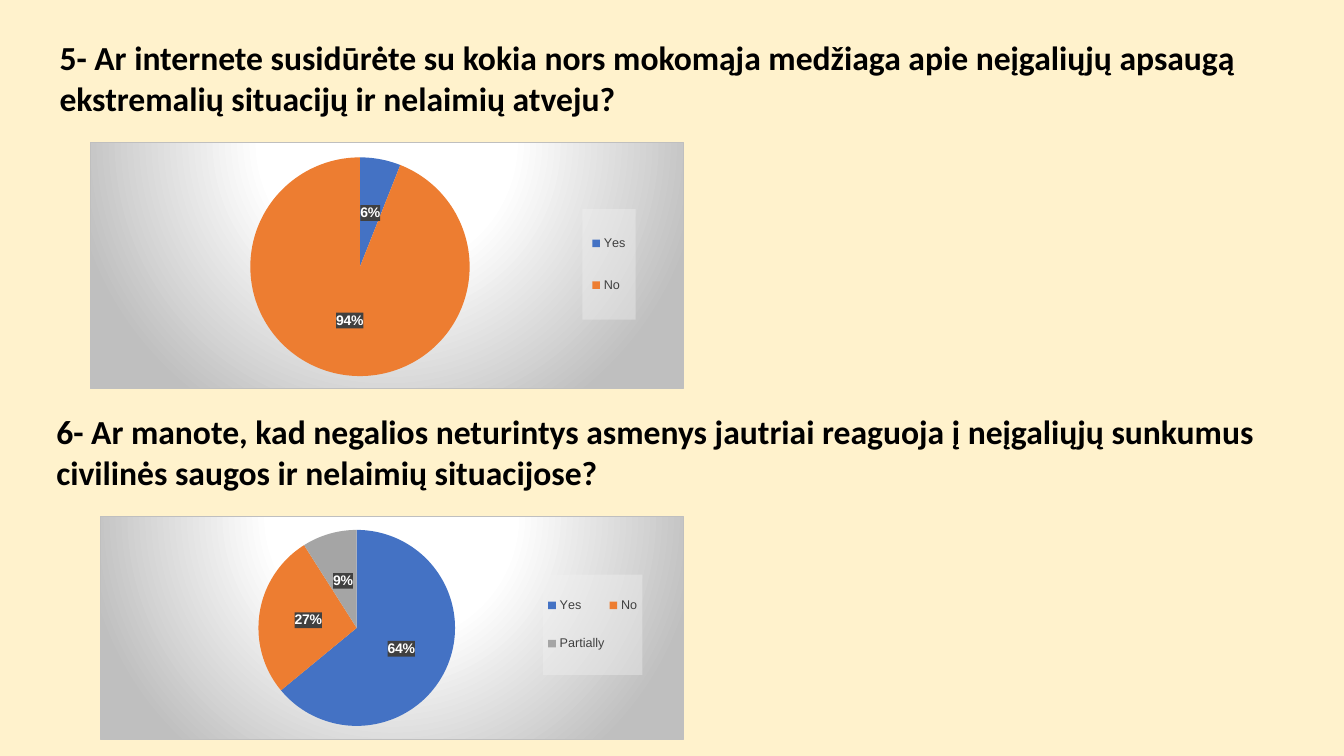
from pptx import Presentation
from pptx.chart.data import CategoryChartData
from pptx.dml.color import RGBColor
from pptx.enum.chart import XL_CHART_TYPE, XL_LABEL_POSITION, XL_LEGEND_POSITION
from pptx.enum.text import MSO_ANCHOR, MSO_AUTO_SIZE, PP_ALIGN
from pptx.oxml import parse_xml
from pptx.oxml.ns import nsdecls
from pptx.util import Inches, Pt

CREAM = RGBColor(0xFF, 0xF2, 0xCC)
BLACK = RGBColor(0x00, 0x00, 0x00)
WHITE = RGBColor(0xFF, 0xFF, 0xFF)
DARK = RGBColor(0x40, 0x40, 0x40)
SILVER = RGBColor(0xBF, 0xBF, 0xBF)
PALE = RGBColor(0xF2, 0xF2, 0xF2)
SLICES = [RGBColor(0x44, 0x72, 0xC4), RGBColor(0xED, 0x7D, 0x31),
          RGBColor(0xA5, 0xA5, 0xA5)]

QUESTIONS = [
    {"text": "5- Ar internete susidūrėte su kokia nors mokomąja medžiaga apie "
             "neįgaliųjų apsaugą ekstremalių situacijų ir nelaimių atveju?",
     "at": (0.49, 0.32, 12.42, 0.91), "chart": (0.89, 1.41, 5.89, 2.45),
     "votes": {"Yes": 6, "No": 94},
     "pie": (0.27, 0.06, 0.37, 0.89), "key": (0.83, 0.27, 0.09, 0.45)},
    {"text": "6- Ar manote, kad negalios neturintys asmenys jautriai reaguoja į "
             "neįgaliųjų sunkumus civilinės saugos ir nelaimių situacijose?",
     "at": (0.46, 4.03, 12.42, 0.91), "chart": (0.99, 5.12, 5.79, 2.22),
     "votes": {"Yes": 64, "No": 27, "Partially": 9},
     "pie": (0.27, 0.06, 0.34, 0.88), "key": (0.76, 0.26, 0.17, 0.45)},
]

GLOW = f"""<a:gradFill><a:gsLst>
<a:gs pos="0"><a:srgbClr val="{WHITE}"/></a:gs>
<a:gs pos="39000"><a:srgbClr val="{WHITE}"/></a:gs>
<a:gs pos="100000"><a:srgbClr val="{SILVER}"/></a:gs></a:gsLst>
<a:path path="circle"><a:fillToRect l="50000" t="-80000" r="50000" b="180000"/></a:path>
</a:gradFill><a:ln w="9525"><a:solidFill><a:srgbClr val="{SILVER}"/></a:solidFill></a:ln>"""
VEIL = f'<a:solidFill><a:srgbClr val="{PALE}"><a:alpha val="39000"/></a:srgbClr></a:solidFill>'
PLATE = f'<a:solidFill><a:srgbClr val="{DARK}"/></a:solidFill>'


def paint(fill):
    return parse_xml(f'<c:spPr {nsdecls("c", "a")}>{fill}</c:spPr>')


def place(box, target):
    """Layout XML for a box given as fractions of the chart."""
    inner = '<c:layoutTarget val="inner"/>' if target == "inner" else ""
    modes = '<c:xMode val="edge"/><c:yMode val="edge"/>'
    sides = "".join(f'<c:{side} val="{part}"/>' for side, part in zip("xywh", box))
    return parse_xml(f'<c:layout {nsdecls("c")}><c:manualLayout>{inner}{modes}{sides}'
                     '</c:manualLayout></c:layout>')


deck = Presentation()
deck.slide_width, deck.slide_height = Inches(13.33), Inches(7.5)
slide = deck.slides.add_slide(deck.slide_layouts[5])
slide.background.fill.solid()
slide.background.fill.fore_color.rgb = CREAM

for order, ask in enumerate(QUESTIONS):
    spot = [Inches(n) for n in ask["at"]]
    if order == 0:
        box = slide.shapes.title
        box.left, box.top, box.width, box.height = spot
    else:
        box = slide.shapes.add_textbox(*spot)
    frame = box.text_frame
    frame.text = ask["text"]
    frame.word_wrap = True
    frame.auto_size = MSO_AUTO_SIZE.NONE
    frame.vertical_anchor = MSO_ANCHOR.TOP
    line = frame.paragraphs[0]
    line.alignment = PP_ALIGN.LEFT
    font = line.runs[0].font

    data = CategoryChartData()
    data.categories = list(ask["votes"])
    data.add_series("Series 1", list(ask["votes"].values()))
    chart = slide.shapes.add_chart(
        XL_CHART_TYPE.PIE, *[Inches(n) for n in ask["chart"]], data).chart
    chart.has_title = False
    chart.has_legend = True
    legend = chart.legend
    legend.position = XL_LEGEND_POSITION.RIGHT
    legend.include_in_layout = False

    series = chart.plots[0].series[0]
    chart.plots[0].vary_by_categories = True
    for i in range(len(ask["votes"])):
        fill = series.points[i].format.fill
        fill.solid()
        fill.fore_color.rgb = SLICES[i]
    labels = series.data_labels
    formats = {"show_percentage": True, "show_value": False, "number_format": "0%",
               "number_format_is_linked": False, "position": XL_LABEL_POSITION.CENTER}
    for name, value in formats.items():
        setattr(labels, name, value)

    for face, name, size, color, bold in [
            (font, "Calibri", 24, BLACK, True), (chart.font, "Arial", 10, BLACK, False),
            (legend.font, "Arial", 9, DARK, False), (labels.font, "Arial", 10, WHITE, True)]:
        face.name, face.size, face.bold = name, Pt(size), bold
        face.color.rgb = color

    root = chart.element
    for old in root.xpath("c:chart/c:plotArea/c:layout | c:chart/c:legend/c:layout"):
        old.getparent().remove(old)
    root.xpath("c:chart/c:plotArea")[0].insert(0, place(ask["pie"], "inner"))
    root.xpath(".//c:legend/c:legendPos")[0].addnext(place(ask["key"], "outer"))
    root.xpath(".//c:legend/c:txPr")[0].addprevious(paint(VEIL))
    root.xpath(".//c:ser/c:dLbls/c:txPr")[0].addprevious(paint(PLATE))
    root.xpath("c:chart")[0].addnext(paint(GLOW))

deck.save("out.pptx")
